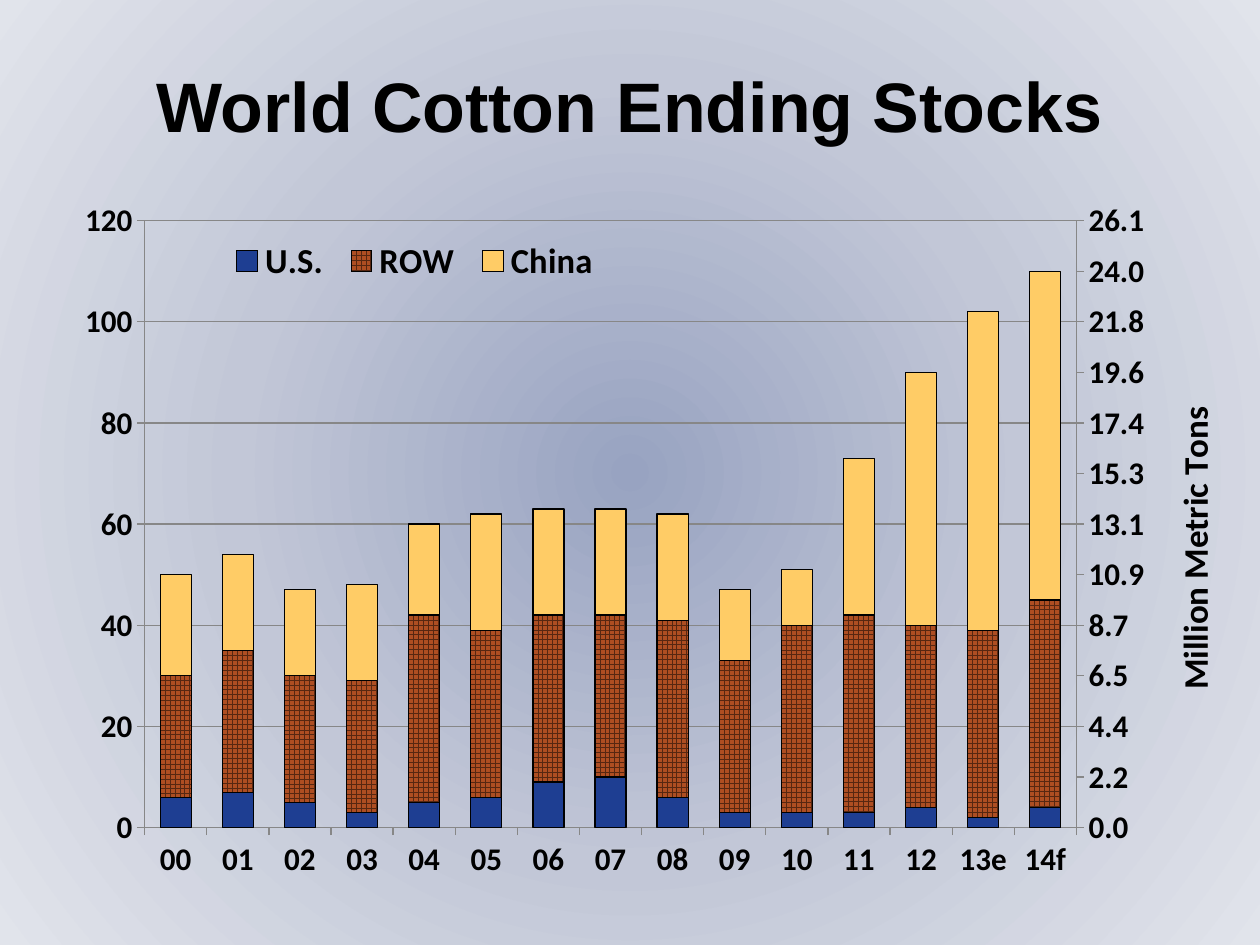
from copy import deepcopy
from typing import NamedTuple

from pptx import Presentation
from pptx import util as u
from pptx.chart.axis import ValueAxis
from pptx.chart.data import CategoryChartData
from pptx.dml.color import RGBColor
from pptx.enum import chart as ch
from pptx.enum import dml, text
from pptx.oxml import parse_xml
from pptx.oxml.ns import nsdecls, qn

WIDE, HIGH = u.Inches(10), u.Inches(7.5)
GREY, BLACK = "878787", "000000"
TONS = 26.143791 / 120  # million metric tons in a million bales


class Box(NamedTuple):
    """A place given in shares of its parent's size."""
    x: float
    y: float
    w: float = 0
    h: float = 0


class Stock(NamedTuple):
    name: str
    vals: list[float]
    fill: str = ""
    grid: str = ""


class Scale(NamedTuple):
    title: str
    top: float
    step: float
    form: str
    spot: Box


STOCKS = [
    Stock("U.S.", [6, 7, 5, 3, 5, 6, 9, 10, 6, 3, 3, 3, 4, 2, 4], "1E3E92"),
    Stock("ROW", [24, 28, 25, 26, 37, 33, 33, 32, 35, 30, 37, 39, 36, 37, 41],
          "AE4E22", "572711"),
    Stock("China", [20, 19, 17, 19, 18, 23, 21, 21, 21, 14, 11, 31, 50, 63, 65],
          "FFCC66"),
    Stock("Series 4", [1.3, 1.6, 1.2, 0.8, 1.2, 1.3, 2.1, 2.2, 1.4, 0.6, 0.6,
                       0.7, 0.8, 0.5, 0.9]),
    Stock("Series 5", [5.2, 6.2, 5.4, 5.6, 8, 7.2, 7.2, 6.9, 7.5, 6.6, 8.1,
                       8.6, 7.8, 8, 8.9]),
    Stock("Series 6", [4.3, 4.1, 3.8, 4.1, 4, 4.9, 4.5, 4.5, 4.7, 3.1, 2.3,
                       6.8, 11, 13.7, 14.2]),
]
YEARS = [f"{n:02}" for n in range(13)] + ["13e", "14f"]
BALES = Scale("Million Bales", 120, 10, "#,##0", Box(0.02, 0.39))
METRIC = Scale("Million Metric Tons", 120 * TONS, 10 * TONS, "#,##0.0",
               Box(0.96, 0.33))


def rgb(code: str) -> RGBColor:
    return RGBColor.from_string(code)


def style(font, size: float, face: str) -> None:
    font.size, font.name, font.bold = u.Pt(size), face, True
    font.color.rgb = rgb(BLACK)


def node(tag: str, val) -> object:
    return parse_xml(f'<c:{tag} {nsdecls("c")} val="{val}"/>')


def place(part, box: Box, index: int, inner: bool = False) -> None:
    """Give a chart part a manual layout as its child at index."""
    for old in part.findall(qn("c:layout")):
        part.remove(old)
    rows = [("xMode", "edge"), ("yMode", "edge"), ("x", box.x), ("y", box.y)]
    if inner:
        rows.insert(0, ("layoutTarget", "inner"))
    if box.w:
        rows += [("w", box.w), ("h", box.h)]
    body = "".join(f'<c:{tag} val="{val}"/>' for tag, val in rows)
    part.insert(index, parse_xml(
        f'<c:layout {nsdecls("c")}><c:manualLayout>{body}'
        '</c:manualLayout></c:layout>'))


def paint(slide) -> None:
    """Fill the background with a round gradient."""
    slide.background.fill.solid()
    stops = [(0, "98A3C1"), (50, "C2C7D7"), (100, "E1E4EB")]
    body = "".join(f'<a:gs pos="{pos * 1000}"><a:srgbClr val="{code}"/></a:gs>'
                   for pos, code in stops)
    grad = parse_xml(
        f'<a:gradFill {nsdecls("a")} rotWithShape="1"><a:gsLst>{body}</a:gsLst>'
        '<a:path path="circle"><a:fillToRect l="50000" t="50000" r="50000" '
        'b="50000"/></a:path></a:gradFill>')
    solid = slide.element.find(".//" + qn("p:bgPr"))[0]
    solid.getparent().replace(solid, grad)


def rule(axis) -> None:
    """Draw an axis line with ticks outside."""
    axis.format.line.color.rgb = rgb(GREY)
    axis.major_tick_mark = ch.XL_TICK_MARK.OUTSIDE
    axis.minor_tick_mark = ch.XL_TICK_MARK.NONE


def measure(axis: ValueAxis, scale: Scale) -> None:
    rule(axis)
    axis.minimum_scale, axis.maximum_scale = 0, scale.top
    axis.major_unit = scale.step
    axis.tick_labels.number_format = scale.form
    axis.tick_labels.number_format_is_linked = False
    frame = axis.axis_title.text_frame
    frame.text = scale.title
    style(frame.paragraphs[0].font, 20, "Calibri")
    turn = frame._txBody.bodyPr
    turn.set("rot", "-5400000")
    turn.set("vert", "horz")
    place(axis._element.find(qn("c:title")), scale.spot, 1)


def shade(bar, stock: Stock) -> None:
    fill, line = bar.format.fill, bar.format.line
    if not stock.fill:
        fill.background()
        line.fill.background()
        return
    if stock.grid:
        fill.patterned()
        fill.pattern = dml.MSO_PATTERN.LARGE_GRID
        fill.fore_color.rgb, fill.back_color.rgb = rgb(stock.grid), rgb(stock.fill)
    else:
        fill.solid()
        fill.fore_color.rgb = rgb(stock.fill)
    line.color.rgb, line.width = rgb(BLACK), u.Pt(0.75)


def split(chart, first: int) -> ValueAxis:
    """Move the series from first on to a right-hand axis, and return it."""
    area = chart._chartSpace.chart.plotArea
    left = area.find(qn("c:barChart"))
    right = deepcopy(left)
    for plot, drop in ((left, slice(first, None)), (right, slice(first))):
        for ser in plot.findall(qn("c:ser"))[drop]:
            plot.remove(ser)
    left.addnext(right)
    cat, val = (deepcopy(area.find(qn(tag))) for tag in ("c:catAx", "c:valAx"))
    ids = [e.get("val") for e in left.findall(qn("c:axId"))]
    fresh = dict(zip(ids, ("5001", "5002")))
    for part in (right, cat, val):
        for tag in ("c:axId", "c:crossAx"):
            for e in part.findall(qn(tag)):
                e.set("val", fresh[e.get("val")])
    cat.find(qn("c:delete")).set("val", "1")
    val.find(qn("c:axPos")).set("val", "r")
    val.find(qn("c:crosses")).set("val", "max")
    area.find(qn("c:valAx")).addnext(val)
    val.addnext(cat)
    axis = ValueAxis(val)
    axis.has_major_gridlines = False
    return axis


def key(chart, hide: range) -> None:
    """Show the legend inside the plot, without the hidden series."""
    chart.has_legend = True
    legend = chart.legend
    legend.position = ch.XL_LEGEND_POSITION.TOP
    legend.include_in_layout = False
    style(legend.font, 20, "Calibri")
    part = legend._element
    for at, idx in enumerate(hide, 1):
        entry = parse_xml(f'<c:legendEntry {nsdecls("c")}/>')
        entry.extend([node("idx", idx), node("delete", 1)])
        part.insert(at, entry)
    place(part, Box(0.16, 0.12, 0.33, 0.06), len(hide) + 1)


def graph(slide) -> None:
    data = CategoryChartData()
    data.categories = YEARS
    for stock in STOCKS:
        data.add_series(stock.name, stock.vals)
    chart = slide.shapes.add_chart(
        ch.XL_CHART_TYPE.COLUMN_STACKED, int(WIDE * 0.025), int(HIGH * 0.156),
        int(WIDE * 0.949), int(HIGH * 0.799), data).chart
    style(chart.font, 18, "Calibri")
    chart.has_title = False
    plot = chart.plots[0]
    plot.gap_width, plot.overlap, plot.vary_by_categories = 100, 100, False
    for bar, stock in zip(plot.series, STOCKS):
        shade(bar, stock)
    rule(chart.category_axis)
    chart.category_axis.tick_label_position = ch.XL_TICK_LABEL_POSITION.LOW
    right = split(chart, 3)
    measure(chart.value_axis, BALES)
    measure(right, METRIC)
    chart.value_axis.major_gridlines.format.line.color.rgb = rgb(GREY)
    key(chart, range(3, 6))
    place(chart._chartSpace.chart.plotArea, Box(0.096, 0.097, 0.79, 0.804), 0, True)


def head(slide) -> None:
    title = slide.shapes.title
    title.left, title.top = int(WIDE * 0.025), int(HIGH * 0.044)
    title.width, title.height = int(WIDE * 0.949), u.Inches(1)
    title.text_frame.text = "World Cotton Ending Stocks"
    title.text_frame.vertical_anchor = text.MSO_ANCHOR.MIDDLE
    para = title.text_frame.paragraphs[0]
    para.alignment = text.PP_ALIGN.CENTER
    style(para.font, 40, "Arial")


def main() -> None:
    deck = Presentation()
    deck.slide_width, deck.slide_height = WIDE, HIGH
    slide = deck.slides.add_slide(deck.slide_layouts[5])
    paint(slide)
    head(slide)
    graph(slide)
    deck.save("out.pptx")


if __name__ == "__main__":
    main()
